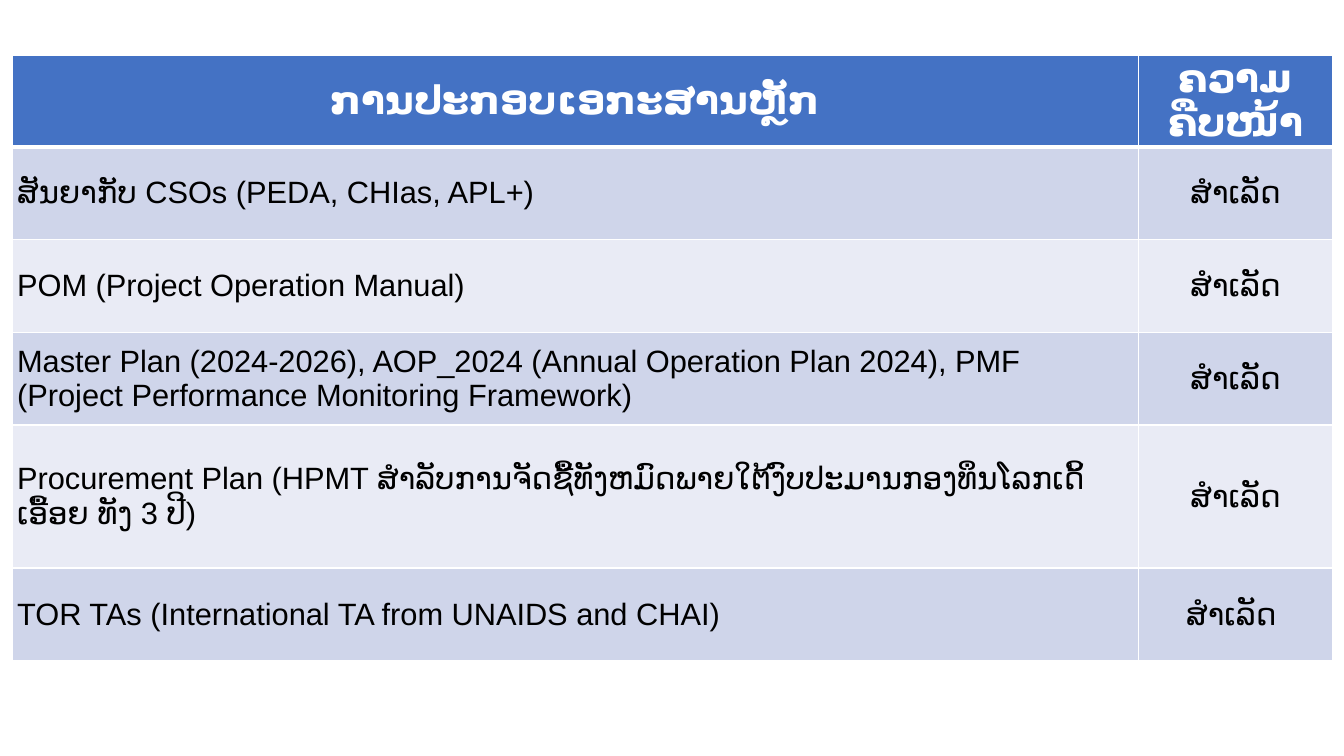
"""Build the slide that reports progress on the key project documents."""
import pptx
import pptx.dml.color
import pptx.enum.text
import pptx.util
from lxml import etree
from pptx.oxml.ns import qn

Inches = pptx.util.Inches
Pt = pptx.util.Pt
RGBColor = pptx.dml.color.RGBColor
PP_ALIGN = pptx.enum.text.PP_ALIGN

WHITE = RGBColor(0xFF, 0xFF, 0xFF)
BLACK = RGBColor(0x00, 0x00, 0x00)
HEADER_BLUE = RGBColor(0x44, 0x72, 0xC4)
BAND_DARK = RGBColor(0xCF, 0xD5, 0xEA)
BAND_LIGHT = RGBColor(0xE9, 0xEB, 0xF5)

HEADINGS = ("ການປະກອບເອກະສານຫຼັກ", "ຄວາມຄືບໜ້າ")
DONE = "ສຳເລັດ"
DOCUMENTS = [
    ("ສັນຍາກັບ CSOs (PEDA, CHIas, APL+)", DONE),
    ("POM (Project Operation Manual)", DONE),
    ("Master Plan (2024-2026), AOP_2024 (Annual Operation Plan 2024), PMF "
     "(Project Performance Monitoring Framework)", DONE),
    ("Procurement Plan (HPMT ສຳລັບການຈັດຊື້ທັງຫມົດພາຍໃຕ້ງົບປະມານກອງທຶນໂລກເດິ້"
     "ເອື້ອຍ ທັງ 3 ປີ)", DONE),
    ("TOR TAs (International TA from UNAIDS and CHAI)", DONE + " "),
]
COLUMN_WIDTHS = (11.17, 1.93)
ROW_HEIGHTS = (0.75, 0.92, 0.92, 0.92, 1.42, 0.92)


class ProgressSlide:
    """Hold the text style and the slide, and draw its elements."""

    font = "Arial"

    def __init__(self, presentation):
        self.slide = presentation.slides.add_slide(presentation.slide_layouts[6])

    def add_borders(self, cell, bottom_width):
        """Draw white lines on the four sides of a cell."""
        properties = cell._tc.get_or_add_tcPr()
        widths = {"a:lnL": 1, "a:lnR": 1, "a:lnT": 1, "a:lnB": bottom_width}
        for position, (side, width) in enumerate(widths.items()):
            line = etree.Element(qn(side), w=str(Pt(width)))
            fill = etree.SubElement(line, qn("a:solidFill"))
            etree.SubElement(fill, qn("a:srgbClr"), val=str(WHITE))
            properties.insert(position, line)

    def write_cell(self, cell, text, align, size, color, bold):
        """Write one run into a cell."""
        cell.vertical_anchor = pptx.enum.text.MSO_ANCHOR.MIDDLE
        cell.margin_left = cell.margin_right = Inches(0.05)
        cell.margin_top = cell.margin_bottom = Inches(0.02)
        paragraph = cell.text_frame.paragraphs[0]
        paragraph.alignment = align
        run = paragraph.add_run()
        run.text = text
        run.font.name = self.font
        run.font.size = Pt(size)
        run.font.bold = bold
        run.font.color.rgb = color
        etree.SubElement(run.font._element, qn("a:cs"), typeface=self.font)

    def add_table(self, left, top, rows, widths, heights):
        """Add a table with a header row and banded body rows."""
        table = self.slide.shapes.add_table(
            len(rows), len(widths), Inches(left), Inches(top),
            Inches(sum(widths)), Inches(sum(heights))).table
        for column, width in zip(table.columns, widths):
            column.width = Inches(width)
        for row_index, (texts, height) in enumerate(zip(rows, heights)):
            table.rows[row_index].height = Inches(height)
            header = row_index == 0
            band = BAND_DARK if row_index % 2 else BAND_LIGHT
            for column_index, text in enumerate(texts):
                cell = table.cell(row_index, column_index)
                cell.fill.solid()
                cell.fill.fore_color.rgb = HEADER_BLUE if header else band
                self.add_borders(cell, 3 if header else 1)
                centred = header or column_index == 1
                self.write_cell(
                    cell, text, PP_ALIGN.CENTER if centred else PP_ALIGN.LEFT,
                    28 if header else 22, WHITE if header else BLACK, header)


def main():
    """Create and save the presentation."""
    presentation = pptx.Presentation()
    presentation.slide_width = Inches(13.33)
    presentation.slide_height = Inches(7.5)
    progress = ProgressSlide(presentation)
    progress.add_table(0.12, 0.55, [HEADINGS, *DOCUMENTS], COLUMN_WIDTHS, ROW_HEIGHTS)
    presentation.save("out.pptx")


if __name__ == "__main__":
    main()
